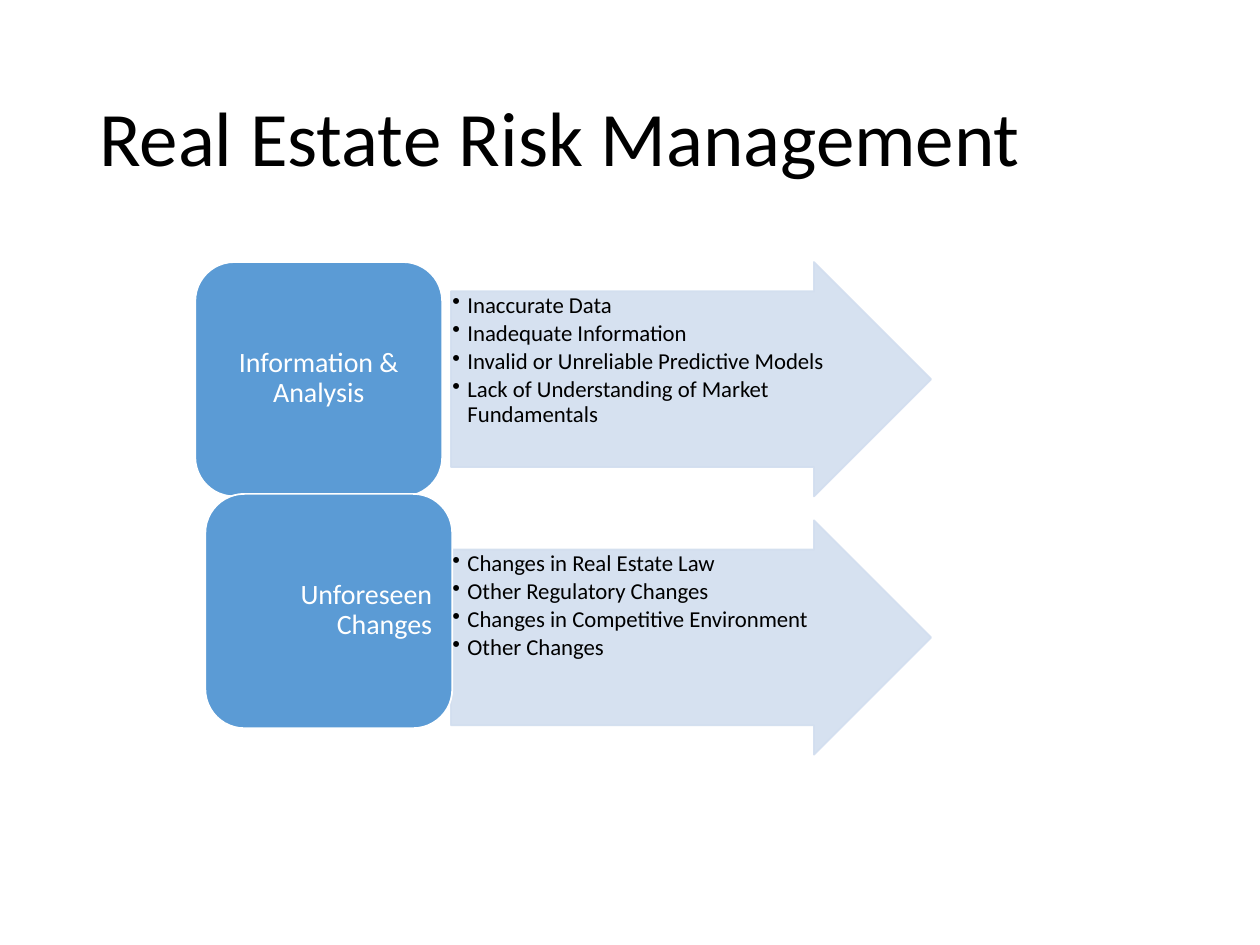
from lxml import etree
from pptx import Presentation
from pptx.dml.color import RGBColor
from pptx.enum import shapes, text
from pptx.oxml import ns
from pptx.util import Inches, Pt

BLACK = RGBColor(0x00, 0x00, 0x00)
WHITE = RGBColor(0xFF, 0xFF, 0xFF)
BLUE = RGBColor(0x5B, 0x9B, 0xD5)
PALE_BLUE = RGBColor(0xD2, 0xDE, 0xEF)
FONT = "Calibri"

# Category, its alignment, block left and top, arrow top, risks
RISK_GROUPS = [
    ("Information & Analysis", text.PP_ALIGN.CENTER, 1.55, 2.08, 2.08,
     ["Inaccurate Data", "Inadequate Information",
      "Invalid or Unreliable Predictive Models",
      "Lack of Understanding of Market Fundamentals"]),
    ("Unforeseen Changes", text.PP_ALIGN.RIGHT, 1.63, 3.92, 4.13,
     ["Changes in Real Estate Law", "Other Regulatory Changes",
      "Changes in Competitive Environment", "Other Changes"]),
]


def add_block(slide, kind, left, top, width, height, fill, line):
    block = slide.shapes.add_shape(
        kind, Inches(left), Inches(top), Inches(width), Inches(height))
    block.shadow.inherit = False
    block.fill.solid()
    block.fill.fore_color.rgb = fill
    block.line.color.rgb = line
    block.line.width = Pt(1)
    return block


def add_text(slide, lines, left, top, width, height, size, color,
             margins=(0.1, 0.05), anchor=text.MSO_ANCHOR.MIDDLE,
             align=text.PP_ALIGN.LEFT):
    frame = slide.shapes.add_textbox(
        Inches(left), Inches(top), Inches(width), Inches(height)).text_frame
    frame.word_wrap = True
    frame.vertical_anchor = anchor
    frame.margin_left = frame.margin_right = Inches(margins[0])
    frame.margin_top = frame.margin_bottom = Inches(margins[1])
    frame.text = "\n".join(lines)
    for paragraph in frame.paragraphs:
        paragraph.alignment = align
        paragraph.line_spacing = 0.9
        paragraph.font.name = FONT
        paragraph.font.size = Pt(size)
        paragraph.font.color.rgb = color
    return frame


def add_bullet(paragraph, indent):
    paragraph.level = 1
    paragraph.space_after = Pt(2)
    properties = paragraph._p.get_or_add_pPr()
    properties.set("marL", str(Inches(indent)))
    properties.set("indent", str(-Inches(indent)))
    bullet = etree.Element(ns.qn("a:buChar"), char="•")
    properties.find(ns.qn("a:defRPr")).addprevious(bullet)


def add_risk_arrow(slide, top, risks):
    arrow = add_block(slide, shapes.MSO_SHAPE.RIGHT_ARROW,
                      3.58, top, 3.81, 1.86, PALE_BLUE, PALE_BLUE)
    arrow.adjustments[0] = 0.75
    arrow.adjustments[1] = 0.5
    # Fill and line are 90% opaque
    for color in arrow._element.spPr.iter(ns.qn("a:srgbClr")):
        etree.SubElement(color, ns.qn("a:alpha"), val="90000")
    frame = add_text(slide, risks, 3.58, top + 0.24, 3.12, 1.39, 13, BLACK,
                     margins=(0.01, 0.01), anchor=text.MSO_ANCHOR.TOP)
    for paragraph in frame.paragraphs:
        add_bullet(paragraph, 0.12)


def add_category(slide, left, top, name, align):
    add_block(slide, shapes.MSO_SHAPE.ROUNDED_RECTANGLE,
              left, top, 1.96, 1.86, BLUE, WHITE)
    add_text(slide, [name], left + 0.09, top + 0.09, 1.78, 1.67, 16, WHITE,
             margins=(0.07, 0.03), align=align)


def main():
    deck = Presentation()
    deck.slide_width, deck.slide_height = Inches(10), Inches(7.5)
    slide = deck.slides.add_slide(deck.slide_layouts[6])

    # Title
    add_text(slide, ["Real Estate Risk Management"],
             0.69, 0.4, 8.62, 1.45, 44, BLACK)

    # Risk categories with their arrows
    for name, align, left, top, arrow_top, risks in RISK_GROUPS:
        add_risk_arrow(slide, arrow_top, risks)
        add_category(slide, left, top, name, align)

    deck.save("out.pptx")


if __name__ == "__main__":
    main()
